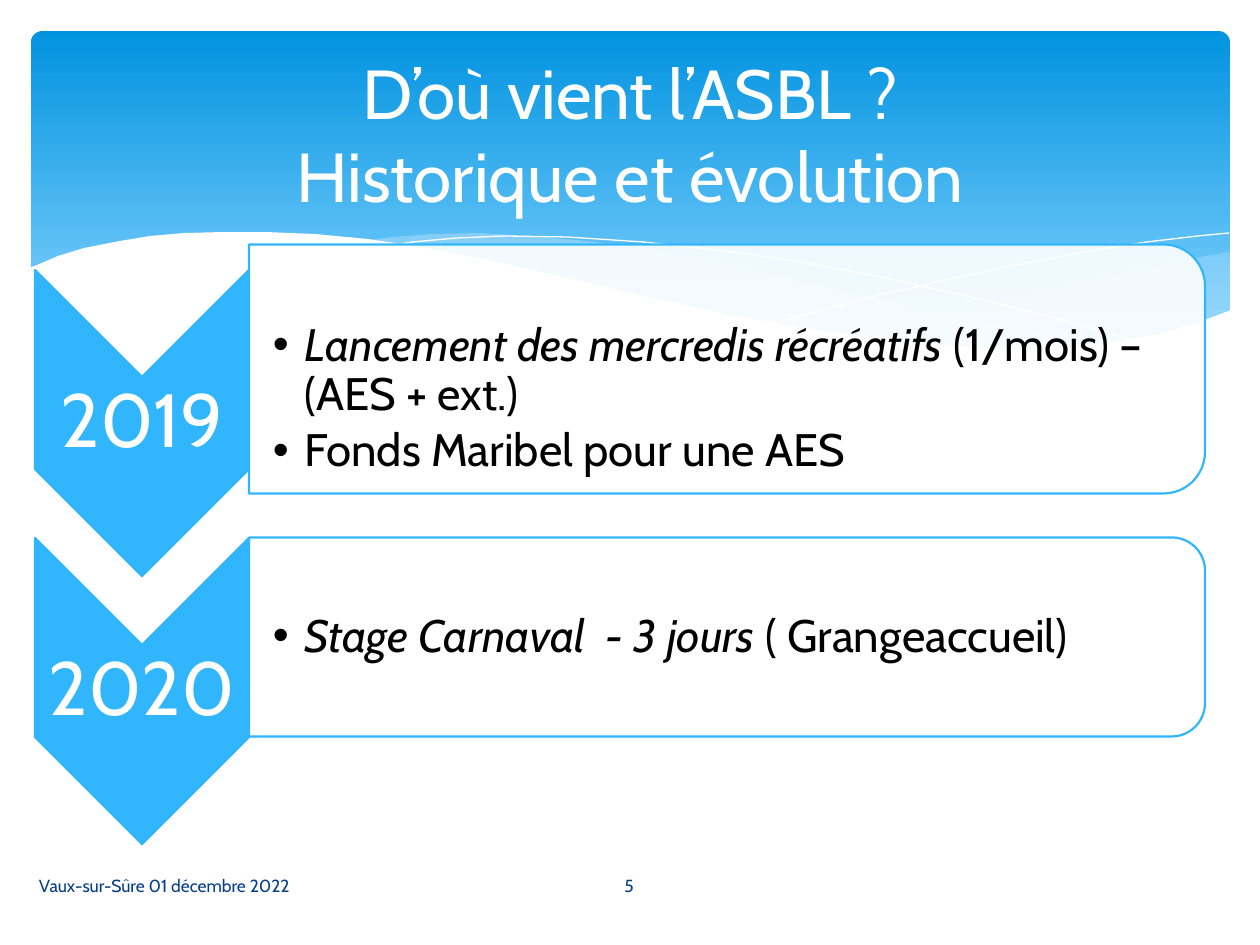
from lxml import etree
from pptx import Presentation
from pptx import util as u
from pptx.dml.color import RGBColor
from pptx.enum import shapes, text
from pptx.oxml import ns

SCALE = 914400 / 126
WHITE = RGBColor(0xFF, 0xFF, 0xFF)
BLACK = RGBColor(0x00, 0x00, 0x00)
SKY = RGBColor(0x31, 0xB6, 0xFD)
DEEP_BLUE = RGBColor(0x02, 0x93, 0xE0)
PALE_BLUE = RGBColor(0x83, 0xD3, 0xFE)
MIST = RGBColor(0xC6, 0xE7, 0xFC)
NAVY = RGBColor(0x07, 0x3E, 0x87)


def px(*lengths):
    return [u.Emu(round(length * SCALE)) for length in lengths]


def add_span(para, wording, size, color, italic=False):
    span = para.add_run()
    span.text = wording
    span.font.name = "Cabin"
    span.font.size = u.Pt(size)
    span.font.color.rgb = color
    span.font.italic = italic


deck = Presentation()
deck.slide_width, deck.slide_height = px(1260, 945)
page = deck.slides.add_slide(deck.slide_layouts[3])
title, *lists = page.placeholders

banner = page.shapes.add_shape(shapes.MSO_SHAPE.ROUNDED_RECTANGLE, *px(31, 31, 1199, 340))
banner.adjustments[0] = 0.034
banner.shadow.inherit = False
banner.line.fill.background()
banner.fill.gradient()
banner.fill.gradient_angle = 270
for stop, color, position in zip(banner.fill.gradient_stops, (DEEP_BLUE, PALE_BLUE), (0, 0.9)):
    stop.color.rgb = color
    stop.position = position

right_ribbon = [
    (1229, 252), (1178, 261), (1123, 272), (1085, 281), (1014, 299), (949, 312),
    (833, 334), (871, 339), (922, 345), (984, 349), (1038, 349), (1087, 347),
    (1130, 340), (1178, 330), (1230, 311), (1230, 252),
]
middle_ribbon = [
    (1125, 344), (1055, 334), (976, 320), (890, 302), (793, 280), (736, 266),
    (682, 255), (633, 247), (586, 241), (529, 236), (479, 233), (433, 234),
    (394, 237), (360, 241), (431, 251), (509, 266), (566, 280), (668, 302),
    (757, 321), (838, 335), (910, 345), (974, 349), (1031, 350), (1080, 349),
]
falling_line = [
    (389, 246), (413, 242), (457, 238), (505, 236), (567, 237), (643, 242),
    (733, 252), (801, 262), (876, 276), (958, 294), (1047, 316), (1143, 343),
]
rising_line = [
    (772, 324), (823, 310), (876, 296), (942, 281), (1016, 265), (1091, 251),
    (1147, 242), (1198, 236), (1229, 233),
]
white_wave = [
    (1231, 310), (1197, 323), (1159, 334), (1118, 341), (1071, 347), (1019, 349),
    (959, 347), (892, 340), (816, 330), (730, 315), (634, 294), (563, 277),
    (493, 261), (428, 248), (368, 239), (315, 234), (266, 232), (223, 232),
    (184, 233), (150, 236), (120, 241), (84, 248), (58, 256), (37, 265),
    (29, 268), (29, 415), (1231, 415),
]
translucent = []
for points, color, opacity in (
    (right_ribbon, MIST, 29),
    (middle_ribbon, MIST, 40),
    (falling_line, None, 100),
    (rising_line, None, 100),
    (white_wave, WHITE, 100),
):
    builder = page.shapes.build_freeform(*points[0], scale=SCALE)
    builder.add_line_segments(points[1:], close=color is not None)
    wave = builder.convert_to_shape()
    wave.shadow.inherit = False
    if color is None:
        wave.fill.background()
        wave.line.color.rgb = WHITE
        wave.line.width = u.Pt(0)
    else:
        wave.fill.solid()
        wave.fill.fore_color.rgb = color
        wave.line.fill.background()
        translucent.append((wave, opacity))

labels = []
for year, chevron_y, panel_y, panel_height in (
    ("2019", 423, 369, 249),
    ("2020", 691, 637, 199),
):
    for kind, center_x, center_y, width, height, color in (
        (shapes.MSO_SHAPE.CHEVRON, 142, chevron_y, 306, 214, SKY),
        (shapes.MSO_SHAPE.ROUND_2_SAME_RECTANGLE, 727, panel_y, panel_height, 956, WHITE),
    ):
        block = page.shapes.add_shape(
            kind, *px(center_x - width / 2, center_y - height / 2, width, height))
        block.rotation = 90
        block.shadow.inherit = False
        block.fill.solid()
        block.fill.fore_color.rgb = color
        block.line.color.rgb = SKY
        block.line.width = u.Pt(1.25)
        if color == WHITE:
            translucent.append((block, 90))
    labels.append((year, 43, WHITE, text.PP_ALIGN.CENTER, 4, (35, chevron_y - 46, 214, 92)))

for shape, opacity in translucent:
    color_node = shape.element.spPr.find(ns.qn("a:solidFill"))[0]
    etree.SubElement(color_node, ns.qn("a:alpha"), val=str(opacity * 1000))

labels += [
    ("Vaux-sur-Sûre 01 décembre 2022", 10, NAVY, text.PP_ALIGN.LEFT, 13, (26, 862, 522, 50)),
    ("5", 10, NAVY, text.PP_ALIGN.CENTER, 13, (549, 862, 160, 50)),
]
for wording, size, color, alignment, inset, place in labels:
    box = page.shapes.add_textbox(*px(*place))
    frame = box.text_frame
    frame.word_wrap = True
    frame.vertical_anchor = text.MSO_ANCHOR.MIDDLE
    frame.margin_left, frame.margin_right = px(inset, inset)
    frame.margin_top, frame.margin_bottom = px(4, 4)
    para = frame.paragraphs[0]
    para.alignment = alignment
    para.line_spacing = 0.9
    add_span(para, wording, size, color)

activities = [
    [
        [("Lancement des mercredis récréatifs ", True), ("(1/mois) – (AES + ext.)", False)],
        [("Fonds Maribel pour une AES", False)],
    ],
    [[("Stage Carnaval  - 3 jours ", True), ("( Grangeaccueil)", False)]],
]
for box, items, place in zip(lists, activities, ((248, 317, 945, 165), (248, 548, 947, 179))):
    box.left, box.top, box.width, box.height = px(*place)
    frame = box.text_frame
    frame.word_wrap = True
    frame.auto_size = text.MSO_AUTO_SIZE.NONE
    frame.vertical_anchor = text.MSO_ANCHOR.MIDDLE
    frame.margin_left, frame.margin_top, frame.margin_right, frame.margin_bottom = px(25, 3, 3, 3)
    for index, item in enumerate(items):
        para = frame.add_paragraph() if index else frame.paragraphs[0]
        para.line_spacing = 0.9
        para.space_before = u.Pt(0)
        para.space_after = u.Pt(4)
        properties = para._p.get_or_add_pPr()
        properties.set("marL", "228600")
        properties.set("indent", "-228600")
        etree.SubElement(properties, ns.qn("a:buFont"), typeface="Arial")
        etree.SubElement(properties, ns.qn("a:buChar"), char="•")
        for wording, italic in item:
            add_span(para, wording, 26, BLACK, italic)

title.left, title.top, title.width, title.height = px(63, 47, 1134, 173)
title.text_frame.auto_size = text.MSO_AUTO_SIZE.NONE
title.text_frame.vertical_anchor = text.MSO_ANCHOR.MIDDLE
para = title.text_frame.paragraphs[0]
para.alignment = text.PP_ALIGN.CENTER
add_span(para, "D’où vient l’ASBL ?", 39.6, WHITE)
para.add_line_break()
add_span(para, "Historique et évolution", 39.6, WHITE)

for placeholder in (*lists, title):
    placeholder.element.getparent().append(placeholder.element)

deck.save("out.pptx")
